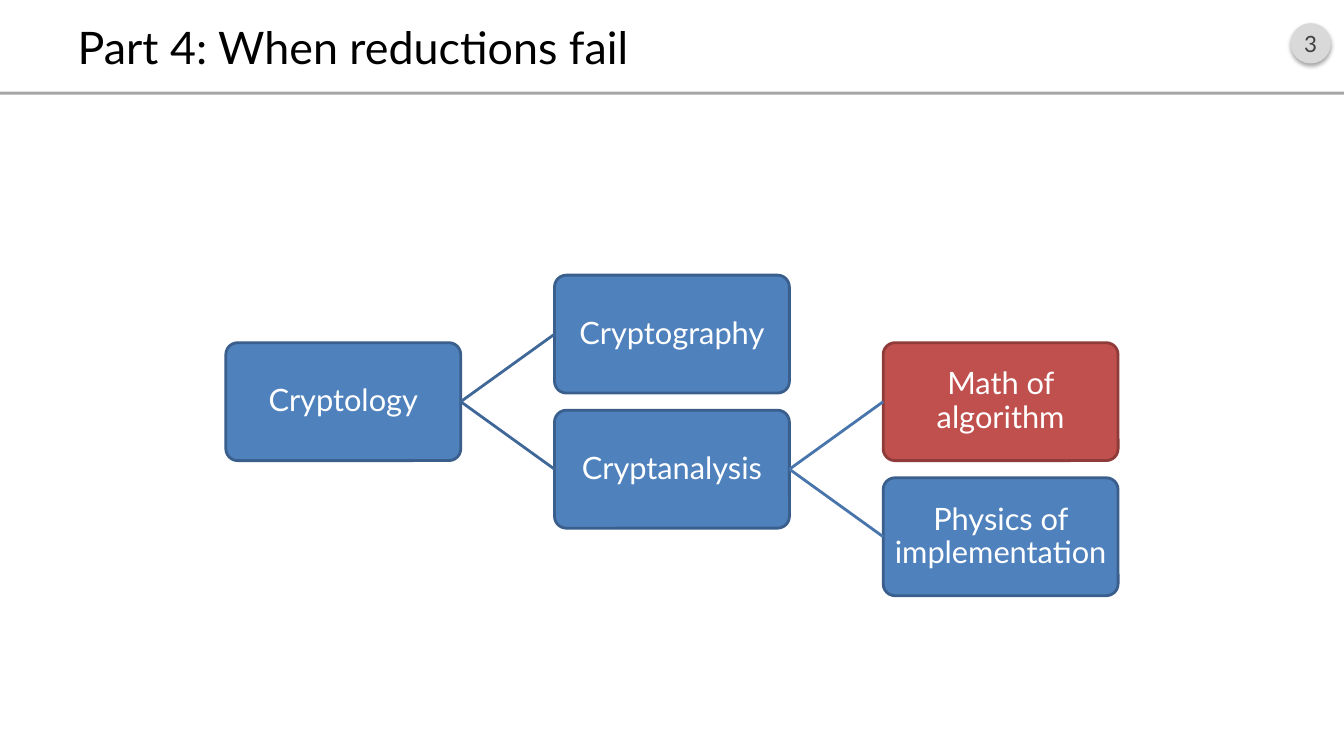
from lxml import etree
from pptx import Presentation
from pptx import util as u
from pptx.dml.color import RGBColor
from pptx.enum import shapes, text
from pptx.oxml import ns

FONT = "Lato"
COLORS = {
    "black": "000000", "white": "FFFFFF", "number": "404040",
    "badge": "D9D9D9", "rule": "A6A6A6",
    "blue": "4F81BD", "blue_edge": "3A5F8C",
    "red": "C0504D", "red_edge": "8E3B39",
    "first_link": "3F6797", "second_link": "4875AC",
}
BOX_WIDTH, BOX_HEIGHT = 2.33, 1.17
COLUMN_STEP, HALF_ROW = 3.26, 0.67
TREE_LEFT, TREE_TOP = 2.24, 2.73
NODES = {
    "Cryptology": (0, 1, "blue"),
    "Cryptography": (1, 0, "blue"),
    "Cryptanalysis": (1, 2, "blue"),
    "Math of algorithm": (2, 1, "red"),
    "Physics of implementation": (2, 3, "blue"),
}
LINKS = [
    ("Cryptology", "Cryptography", "first_link"),
    ("Cryptology", "Cryptanalysis", "first_link"),
    ("Cryptanalysis", "Math of algorithm", "second_link"),
    ("Cryptanalysis", "Physics of implementation", "second_link"),
]


def rgb(name):
    """Return the named colour."""
    return RGBColor.from_string(COLORS[name])


def write_text(shape, words, size, color, align=text.PP_ALIGN.CENTER,
               insets=(0.05, 0.05), line_spacing=1.0):
    """Write one formatted paragraph, centred vertically in the shape."""
    frame = shape.text_frame
    frame.word_wrap = True
    frame.auto_size = text.MSO_AUTO_SIZE.NONE
    frame.vertical_anchor = text.MSO_ANCHOR.MIDDLE
    frame.margin_left = frame.margin_right = u.Inches(insets[0])
    frame.margin_top = frame.margin_bottom = u.Inches(insets[1])
    paragraph = frame.paragraphs[0]
    paragraph.alignment = align
    paragraph.line_spacing = line_spacing
    run = paragraph.add_run()
    run.text = words
    run.font.name = FONT
    run.font.size = u.Pt(size)
    run.font.color.rgb = rgb(color)


def add_block(slide, kind, left, top, width, height, fill, edge=None):
    """Add a filled preset shape, outlined only when an edge colour is given."""
    shape = slide.shapes.add_shape(
        kind, u.Inches(left), u.Inches(top), u.Inches(width), u.Inches(height))
    shape.shadow.inherit = False
    shape.fill.solid()
    shape.fill.fore_color.rgb = rgb(fill)
    if edge:
        shape.line.color.rgb = rgb(edge)
        shape.line.width = u.Pt(2)
    else:
        shape.line.fill.background()
    return shape


def add_title(slide, words):
    """Place and fill the title placeholder."""
    title = slide.shapes.title
    title.left, title.top = u.Inches(0.67), u.Inches(0.16)
    title.width, title.height = u.Inches(12), u.Inches(0.6)
    write_text(title, words, 32, "black", align=text.PP_ALIGN.LEFT,
               insets=(0.1, 0.05))


def add_badge(slide, number):
    """Add the round page number with its soft shadow."""
    badge = add_block(slide, shapes.MSO_SHAPE.OVAL, 12.8, 0.23, 0.4, 0.4, "badge")
    write_text(badge, number, 16, "number", insets=(0, 0.05))
    effects = badge.element.spPr.find(ns.qn("a:effectLst"))
    shadow = etree.SubElement(
        effects, ns.qn("a:outerShdw"), blurRad=str(u.Pt(3.1)),
        dist=str(u.Pt(1.8)), dir="5400000", algn="t", rotWithShape="0")
    color = etree.SubElement(shadow, ns.qn("a:srgbClr"), val=COLORS["black"])
    etree.SubElement(color, ns.qn("a:alpha"), val="35000")


def add_node(slide, words, column, row, color):
    """Add a tree box at a column and a half-row."""
    node = add_block(
        slide, shapes.MSO_SHAPE.ROUNDED_RECTANGLE,
        TREE_LEFT + column * COLUMN_STEP, TREE_TOP + row * HALF_ROW,
        BOX_WIDTH, BOX_HEIGHT, color, edge=f"{color}_edge")
    node.adjustments[0] = 0.1
    write_text(node, words, 22, "white", line_spacing=0.9)
    return node


def add_link(slide, parent, child, color):
    """Join the right side of the parent to the left side of the child."""
    link = slide.shapes.add_connector(shapes.MSO_CONNECTOR.STRAIGHT, 0, 0, 0, 0)
    link.begin_connect(parent, 3)
    link.end_connect(child, 1)
    link.line.color.rgb = rgb(color)
    link.line.width = u.Pt(2)
    etree.SubElement(link.element.spPr, ns.qn("a:effectLst"))


def main():
    """Build the slide and save it."""
    presentation = Presentation()
    presentation.slide_width = u.Inches(13.33)
    presentation.slide_height = u.Inches(7.5)
    slide = presentation.slides.add_slide(presentation.slide_layouts[5])
    add_title(slide, "Part 4: When reductions fail")
    add_badge(slide, "3")
    add_block(slide, shapes.MSO_SHAPE.RECTANGLE, 0, 0.91, 13.33, 0.03, "rule")
    nodes = {words: add_node(slide, words, *place)
             for words, place in NODES.items()}
    for parent, child, color in LINKS:
        add_link(slide, nodes[parent], nodes[child], color)
    presentation.save("out.pptx")


if __name__ == "__main__":
    main()
